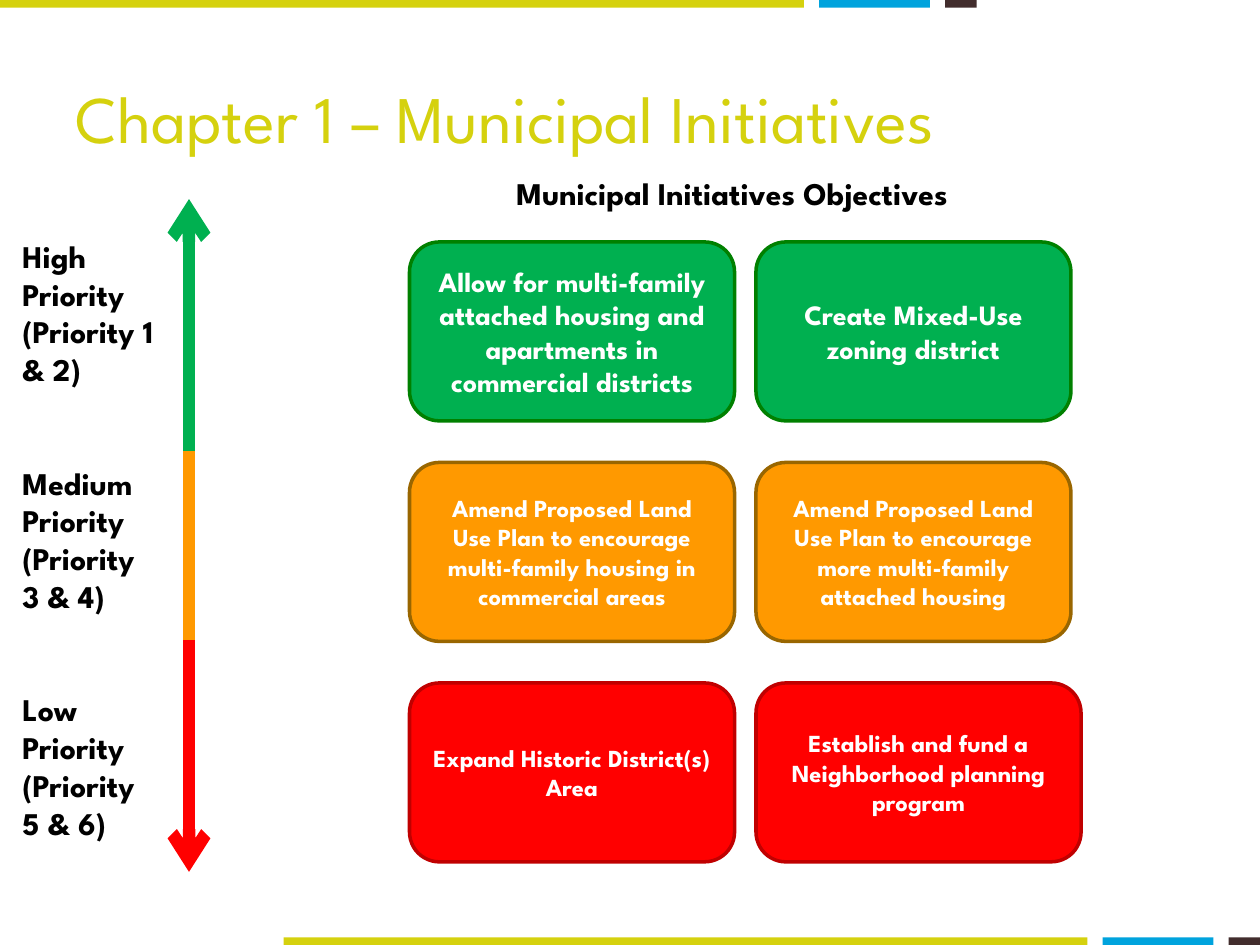
from pptx import Presentation
from pptx.dml.color import RGBColor
from pptx.enum.shapes import MSO_CONNECTOR as Connector, MSO_SHAPE as Shape
from pptx.enum.text import MSO_ANCHOR as Anchor, PP_ALIGN as Align
from pptx.util import Inches, Pt
from lxml.etree import SubElement
from pptx.oxml.ns import qn

COLORS = {
    "lime": "D5D10E", "blue": "00A3DD", "brown": "422D2D",
    "green": "00B050", "green_edge": "008000",
    "orange": "FF9900", "orange_edge": "996600",
    "red": "FF0000", "red_edge": "C00000",
    "black": "000000", "white": "FFFFFF",
}


class PrioritySlide:
    """Draws styled elements on one slide."""

    font = "League Spartan"

    def __init__(self, slide):
        self.shapes = slide.shapes

    def color(self, name):
        return RGBColor.from_string(COLORS[name])

    def fill_text(self, frame, paragraphs, size, color, bold=True, align=Align.LEFT, gap=0):
        frame.word_wrap = True
        frame.text = "\n".join(paragraphs)
        for index, paragraph in enumerate(frame.paragraphs):
            paragraph.alignment = align
            paragraph.space_before = Pt(gap if index else 0)
            for run in paragraph.runs:
                run.font.name, run.font.size, run.font.bold = self.font, Pt(size), bold
                run.font.color.rgb = self.color(color)

    def text(self, box, paragraphs, size, color="black", anchor=Anchor.TOP, **style):
        frame = self.shapes.add_textbox(*map(Inches, box)).text_frame
        frame.vertical_anchor = anchor
        self.fill_text(frame, paragraphs, size, color, **style)

    def block(self, kind, box, fill):
        block = self.shapes.add_shape(kind, *map(Inches, box))
        block.shadow.inherit = False
        block.fill.solid()
        block.fill.fore_color.rgb = self.color(fill)
        block.line.fill.background()
        return block

    def bar(self, left, top, width, fill, rotation=0):
        self.block(Shape.RECTANGLE, (left, top, width, 0.06), fill).rotation = rotation

    def card(self, box, objective, size, fill):
        card = self.block(Shape.ROUNDED_RECTANGLE, box, fill)
        card.line.color.rgb = self.color(fill + "_edge")
        card.line.width = Pt(2)
        card.text_frame.vertical_anchor = Anchor.MIDDLE
        self.fill_text(card.text_frame, [objective], size, "white", align=Align.CENTER)

    def axis(self, x, start, end, color, arrow):
        axis = self.shapes.add_connector(
            Connector.STRAIGHT, *map(Inches, (x, start, x, end)))
        axis.line.color.rgb = self.color(color)
        axis.line.width = Pt(7)
        properties = axis._element.spPr
        if arrow:
            SubElement(properties.get_or_add_ln(), qn("a:tailEnd"), type="arrow")
        SubElement(properties, qn("a:effectLst"))


def main():
    deck = Presentation()
    deck.slide_width, deck.slide_height = Inches(10), Inches(7.5)
    page = PrioritySlide(deck.slides.add_slide(deck.slide_layouts[6]))

    for left, width, fill in ((0, 6.38, "lime"), (6.5, 0.88, "blue"), (7.5, 0.25, "brown")):
        page.bar(left + 2.25, 7.44, width, fill)
        page.bar(left, 0, width, fill, rotation=180)

    page.text((0.5, 0.3, 9, 1.25), ["Chapter 1 – Municipal Initiatives"], 38, "lime",
              anchor=Anchor.MIDDLE, bold=False)
    page.text((4, 1.33, 4, 0.4), ["Municipal Initiatives Objectives"], 18)
    page.text((0.08, 1.83, 1.25, 4.95),
              ["High Priority (Priority 1 & 2)", "Medium Priority (Priority 3 & 4)",
               "Low Priority (Priority 5 & 6)"], 18, gap=43.2)

    for start, end, color, arrow in ((3.58, 1.58, "green", True),
                                     (3.58, 5.08, "orange", False),
                                     (5.08, 6.92, "red", True)):
        page.axis(1.5, start, end, color, arrow)

    priorities = (
        ("green", 16, 2.5,
         "Allow for multi-family attached housing and apartments in commercial districts",
         "Create Mixed-Use zoning district"),
        ("orange", 14, 2.5,
         "Amend Proposed Land Use Plan to encourage multi-family housing in commercial areas",
         "Amend Proposed Land Use Plan to encourage more multi-family attached housing"),
        ("red", 14, 2.58,
         "Expand Historic District(s) Area",
         "Establish and fund a Neighborhood planning program"),
    )
    for row, (fill, size, right_width, *objectives) in enumerate(priorities):
        for left, width, objective in zip((3.25, 6), (2.58, right_width), objectives):
            page.card((left, 1.92 + 1.75 * row, width, 1.42), objective, size, fill)

    deck.save("out.pptx")


if __name__ == "__main__":
    main()
